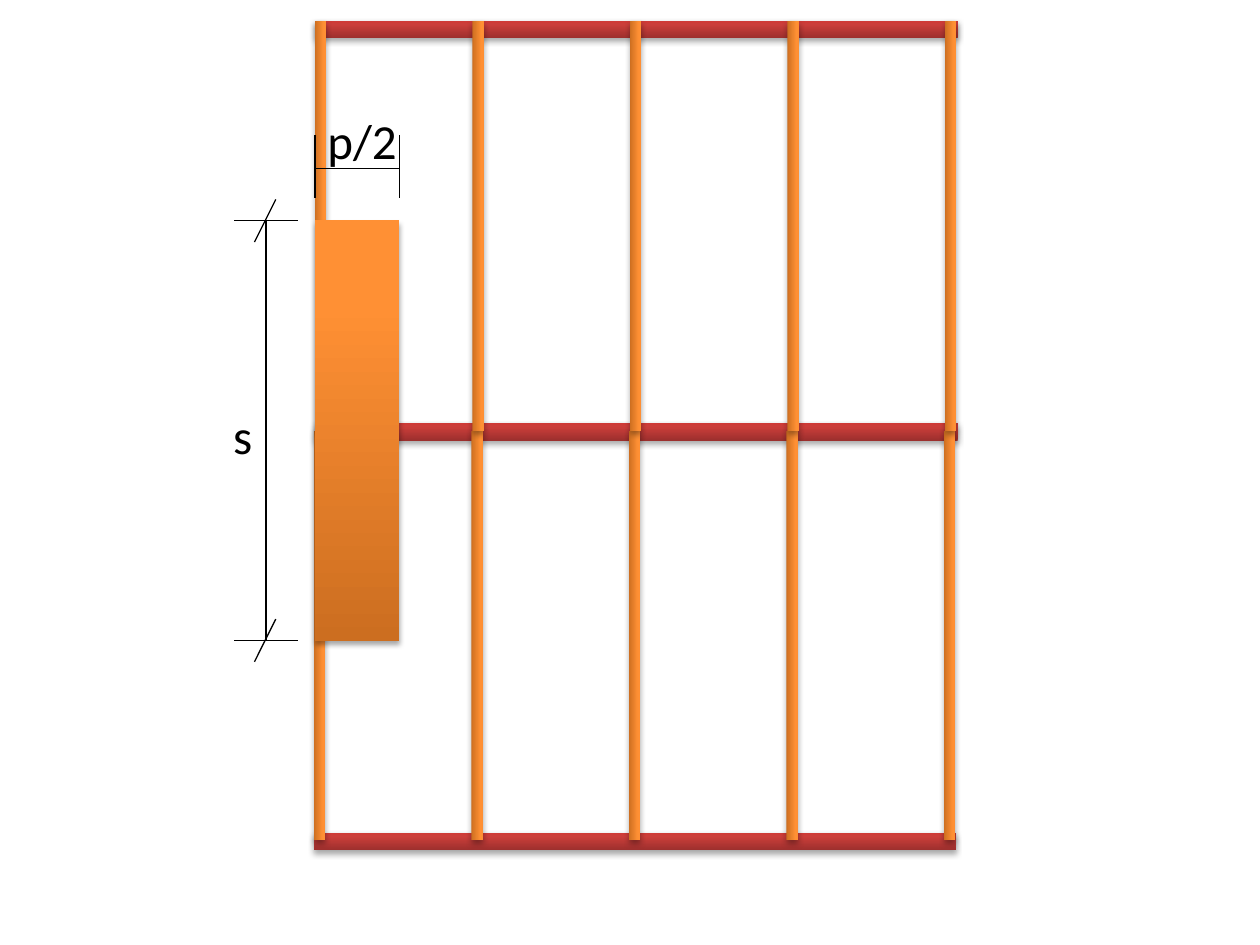
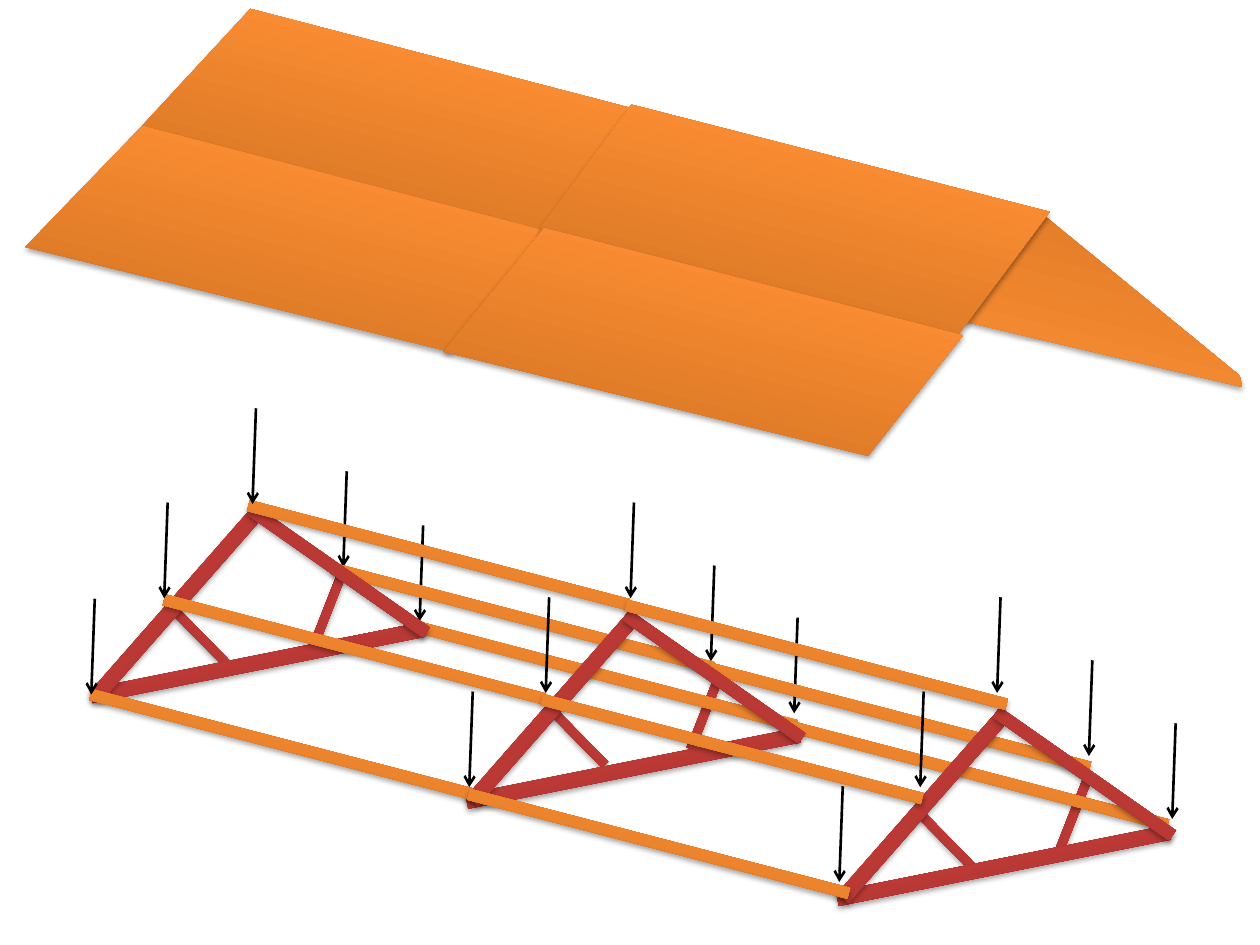
from copy import deepcopy
from math import cos, radians, sin

from pptx import Presentation
from pptx.dml.color import RGBColor
from pptx.enum.shapes import MSO_CONNECTOR, MSO_SHAPE
from pptx.enum.text import MSO_AUTO_SIZE
from pptx.oxml.ns import qn
from pptx.util import Cm, Pt

RECT = MSO_SHAPE.RECTANGLE
LINE = MSO_CONNECTOR.STRAIGHT
GROW = MSO_AUTO_SIZE.SHAPE_TO_FIT_TEXT

HUES = {
    "red": ("9C2F2D", "CB3E3A", "CE3B37"),
    "gold": ("CC6E20", "FF9034", "FF9136"),
    "ink": "000000",
}
STOPS = (0, 0.8, 1)
FRAME = {"word_wrap": False, "auto_size": GROW}
FONT = {"name": "Calibri", "size": Pt(28)}
SLOPE = 14.6


def paint(shape, hue, angle=90):
    """Fill with the three-stop gradient of a material, without an outline."""
    shape.line.fill.background()
    shape.fill.gradient()
    shape.fill.gradient_angle = angle
    first = shape._element.spPr.find(".//" + qn("a:gs"))
    first.addnext(deepcopy(first))
    for stop, spot, tone in zip(shape.fill.gradient_stops, STOPS, HUES[hue]):
        stop.position = spot
        stop.color.rgb = RGBColor.from_string(tone)


def rule(slide, x1, y1, x2, y2, width=0.75, arrow=False):
    line = slide.shapes.add_connector(LINE, Cm(x1), Cm(y1), Cm(x2), Cm(y2))
    line.line.color.rgb = RGBColor.from_string(HUES["ink"])
    line.line.width = Pt(width)
    props = line._element.spPr
    props.append(props.makeelement(qn("a:effectLst"), {}))
    if arrow:
        stroke = line.line._get_or_add_ln()
        stroke.append(stroke.makeelement(qn("a:tailEnd"), {"type": "arrow"}))


deck = Presentation()
deck.slide_width, deck.slide_height = Cm(25.4), Cm(19.05)
blank = deck.slide_layouts[6]
plan = deck.slides.add_slide(blank)
view = deck.slides.add_slide(blank)

# Bars: material, centre x, centre y, length, depth, angle
grid = [("red", x, y, 12.95, 0.35, 0)
        for x, y in [(12.8, 16.97), (12.83, 8.71), (12.83, 0.6)]]
for x, y in [(6.44, 12.81), (6.46, 4.56)]:
    grid += [("gold", x + 3.175 * i, y, 8.26, 0.23, 90) for i in range(5)]
grid.append(("gold", 7.2, 8.68, 1.7, 8.47, 0))

# Roof frame: struts and hidden purlins first, then trusses and front purlins
back = []
for dx, dy in [(0, 0), (7.62, 2.03), (15.04, 4.11)]:
    back += [("red", 4.01 + dx, 12.81 + dy, 1.63, 0.18, 45.6),
             ("red", 6.6 + dx, 12.31 + dy, 1.63, 0.18, 111.4)]
for dx, dy in [(0, 0), (7.49, 2)]:
    back.append(("gold", 12.22 + dx, 13.63 + dy, 7.92, 0.23, SLOPE))

front = [("gold", 10.54 + dx, 12.46 + dy, 7.92, 0.23, SLOPE)
         for dx, dy in [(0, 0), (7.6, 2.01)]]
for dx, dy in [(0, 0), (7.57, 2.13), (15.04, 4.09)]:
    front += [("red", 5.19 + dx, 13.36 + dy, 6.83, 0.3, -11.3),
              ("red", 3.53 + dx, 12.22 + dy, 4.78, 0.3, -48.7),
              ("red", 6.82 + dx, 11.51 + dy, 4.34, 0.25, 35)]
for x, y in [(5.66, 15), (8.84, 11.19), (7.14, 13.09)]:
    front += [("gold", x + dx, y + dy, 7.92, 0.23, SLOPE)
              for dx, dy in [(0, 0), (7.62, 2.01)]]

# Start points of the load arrows
far = [(16.08, 12.45), (14.4, 11.4), (8.53, 10.59), (6.99, 9.5)]
near = [
    (1.91, 12.07), (3.38, 10.13), (5.16, 8.23),
    (9.53, 13.94), (11.07, 12.04), (12.78, 10.13),
    (16.99, 15.85), (18.62, 13.94), (20.17, 12.04),
    (22.02, 13.31), (23.7, 14.58),
]

for slide, bars, loads in [(plan, grid, []), (view, back, far), (view, front, near)]:
    for hue, x, y, long, deep, angle in bars:
        bar = slide.shapes.add_shape(
            RECT, Cm(x - long / 2), Cm(y - deep / 2), Cm(long), Cm(deep))
        bar.rotation = angle
        paint(bar, hue)
    for x, y in loads:
        rule(slide, x, y, x - 0.07, y + 1.93, 1.5, True)

# Dimensions on the plan
rule(plan, 5.36, 4.45, 5.36, 12.91)
for y in (4.45, 12.91):
    rule(plan, 4.72, y, 6, y)
    rule(plan, 5.56, y - 0.43, 5.13, y + 0.43)
rule(plan, 6.35, 3.39, 8.05, 3.39)
for x in (6.35, 8.05):
    rule(plan, x, 2.72, x, 3.99)

for text, x, y, wide in [("s", 4.45, 8.05, 0.91), ("p/2", 6.35, 2.11, 1.93)]:
    frame = plan.shapes.add_textbox(Cm(x), Cm(y), Cm(wide), Cm(1.45)).text_frame
    for key, value in FRAME.items():
        setattr(frame, key, value)
    run = frame.paragraphs[0].add_run()
    run.text = text
    for key, value in FONT.items():
        setattr(run.font, key, value)
    run.font.color.rgb = RGBColor.from_string(HUES["ink"])

# Roof panels: gradient angle and corners; the far side is lit from below
panels = [
    (270, [(11.23, 4.55), (25.04, 7.8), (24.99, 7.57), (21.08, 4.37),
           (10.9, 1.88), (10.52, 1.88)]),
    (90, [(5.05, 0.18), (12.73, 2.18), (10.9, 4.65), (2.77, 2.64)]),
    (90, [(2.87, 2.54), (10.97, 4.65), (9.07, 7.09), (0.51, 4.98)]),
    (90, [(12.73, 2.11), (21.16, 4.27), (19.33, 6.73), (11.2, 4.75),
          (10.87, 4.75), (10.92, 4.55)]),
    (90, [(10.97, 4.6), (19.41, 6.76), (17.5, 9.19), (8.94, 7.09)]),
]
# Each outline is levelled, then turned back so its gradient follows the slope
tilt = complex(cos(radians(SLOPE)), sin(radians(SLOPE)))
for angle, spots in panels:
    level = [complex(x, y) / tilt for x, y in spots]
    xs = [p.real for p in level]
    ys = [p.imag for p in level]
    mid = complex(min(xs) + max(xs), min(ys) + max(ys)) / 2 * tilt
    edge = [(Cm(x), Cm(y)) for x, y in zip(xs, ys)]
    pen = view.shapes.build_freeform(*edge[0])
    pen.add_line_segments(edge[1:], close=True)
    panel = pen.convert_to_shape()
    panel.left = Cm(mid.real) - panel.width // 2
    panel.top = Cm(mid.imag) - panel.height // 2
    panel.rotation = SLOPE
    paint(panel, "gold", angle)

# The front arrows stand above the frame and clear of the panels
deck.save("out.pptx")
